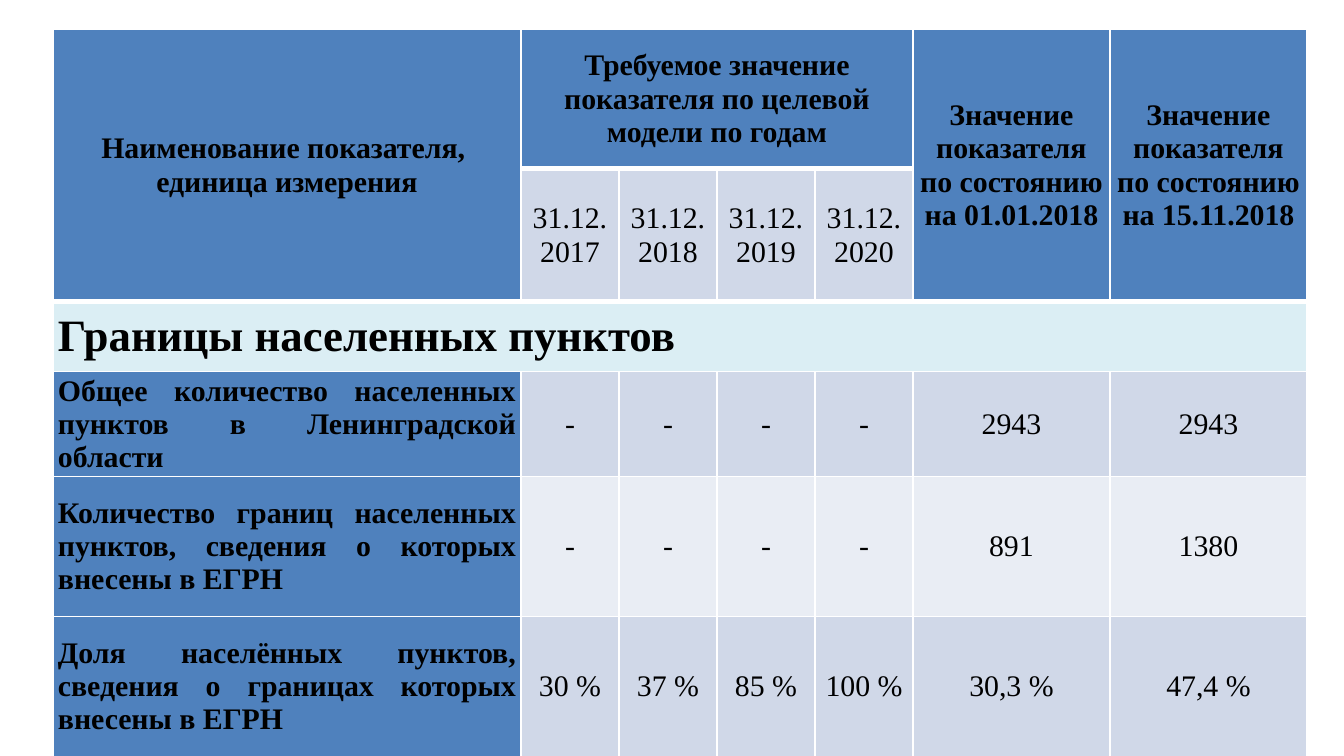
"""Build a slide with a table of settlement boundary indicators."""
from lxml import etree
from pptx import Presentation
from pptx import util as u
from pptx.dml.color import RGBColor
from pptx.enum import text
from pptx.oxml.ns import qn

PX = 914400 / 134.4
BLUE = RGBColor(0x4F, 0x81, 0xBD)
AQUA = RGBColor(0xDB, 0xEE, 0xF4)
BAND_DARK = RGBColor(0xD0, 0xD8, 0xE8)
BAND_LIGHT = RGBColor(0xE9, 0xED, 0xF4)
BLACK = RGBColor(0, 0, 0)
WHITE = RGBColor(0xFF, 0xFF, 0xFF)

LEFT, TOP = 53, 29
COLS = [468] + [98] * 4 + [197] * 2
ROWS = [140, 105, 70, 105, 140, 140]
MERGES = [(0, 0, 1, 0), (0, 1, 0, 4), (0, 5, 1, 5), (0, 6, 1, 6), (2, 0, 2, 6)]
HEAD_ROWS, SECTION_ROW = 2, 2

STATE = "Значение показателя по состоянию на "
CELLS = [
    ["Наименование показателя, \vединица измерения",
     "Требуемое значение показателя по целевой модели по годам",
     "", "", "", STATE + "01.01.2018", STATE + "15.11.2018"],
    ["", *(f"31.12.\n{year}" for year in range(2017, 2021)), "", ""],
    ["Границы населенных пунктов"] + [""] * 6,
    ["Общее количество населенных пунктов в Ленинградской области",
     "-", "-", "-", "-", "2943", "2943"],
    ["Количество границ населенных пунктов, сведения о которых внесены в ЕГРН",
     "-", "-", "-", "-", "891", "1380"],
    ["Доля населённых пунктов, сведения о границах которых внесены в ЕГРН",
     "30 %", "37 %", "85 %", "100 %", "30,3 %", "47,4 %"],
]


def px(n):
    return u.Emu(round(n * PX))


def fill_for(row, col):
    if row == SECTION_ROW:
        return AQUA
    if row == 0 or col == 0 or (row < HEAD_ROWS and col > 4):
        return BLUE
    return BAND_LIGHT if row == 4 else BAND_DARK


def set_borders(cell, row):
    top = 3 if 0 < row <= HEAD_ROWS else 1
    bottom = 3 if row < HEAD_ROWS else 1
    tc_pr = cell._tc.get_or_add_tcPr()
    for side, width in (("L", 1), ("R", 1), ("T", top), ("B", bottom)):
        ln = etree.SubElement(tc_pr, qn(f"a:ln{side}"), w=str(u.Pt(width)))
        fill = etree.SubElement(ln, qn("a:solidFill"))
        etree.SubElement(fill, qn("a:srgbClr"), val=str(WHITE))


def format_cell(cell, row, col):
    set_borders(cell, row)
    fill = fill_for(row, col)
    cell.fill.solid()
    cell.fill.fore_color.rgb = fill
    cell.margin_left = cell.margin_right = px(5)
    cell.margin_top = cell.margin_bottom = 0
    cell.vertical_anchor = text.MSO_ANCHOR.MIDDLE
    cell.text = CELLS[row][col]
    justified = col == 0 and row >= HEAD_ROWS
    for p in cell.text_frame.paragraphs:
        p.alignment = text.PP_ALIGN.JUSTIFY if justified else text.PP_ALIGN.CENTER
        p.font.name = "Times New Roman"
        p.font.size = u.Pt(24 if row == SECTION_ROW else 16)
        p.font.bold = fill in (BLUE, AQUA)
        p.font.color.rgb = BLACK


def main():
    prs = Presentation()
    prs.slide_width, prs.slide_height = px(1344), px(756)
    s = prs.slides.add_slide(prs.slide_layouts[6])
    table = s.shapes.add_table(len(ROWS), len(COLS), px(LEFT), px(TOP),
                               px(sum(COLS)), px(sum(ROWS))).table
    for column, width in zip(table.columns, COLS):
        column.width = px(width)
    for row, height in zip(table.rows, ROWS):
        row.height = px(height)
    for r in range(len(ROWS)):
        for c in range(len(COLS)):
            format_cell(table.cell(r, c), r, c)
    for r1, c1, r2, c2 in MERGES:
        table.cell(r1, c1).merge(table.cell(r2, c2))
    prs.save("out.pptx")


if __name__ == "__main__":
    main()
